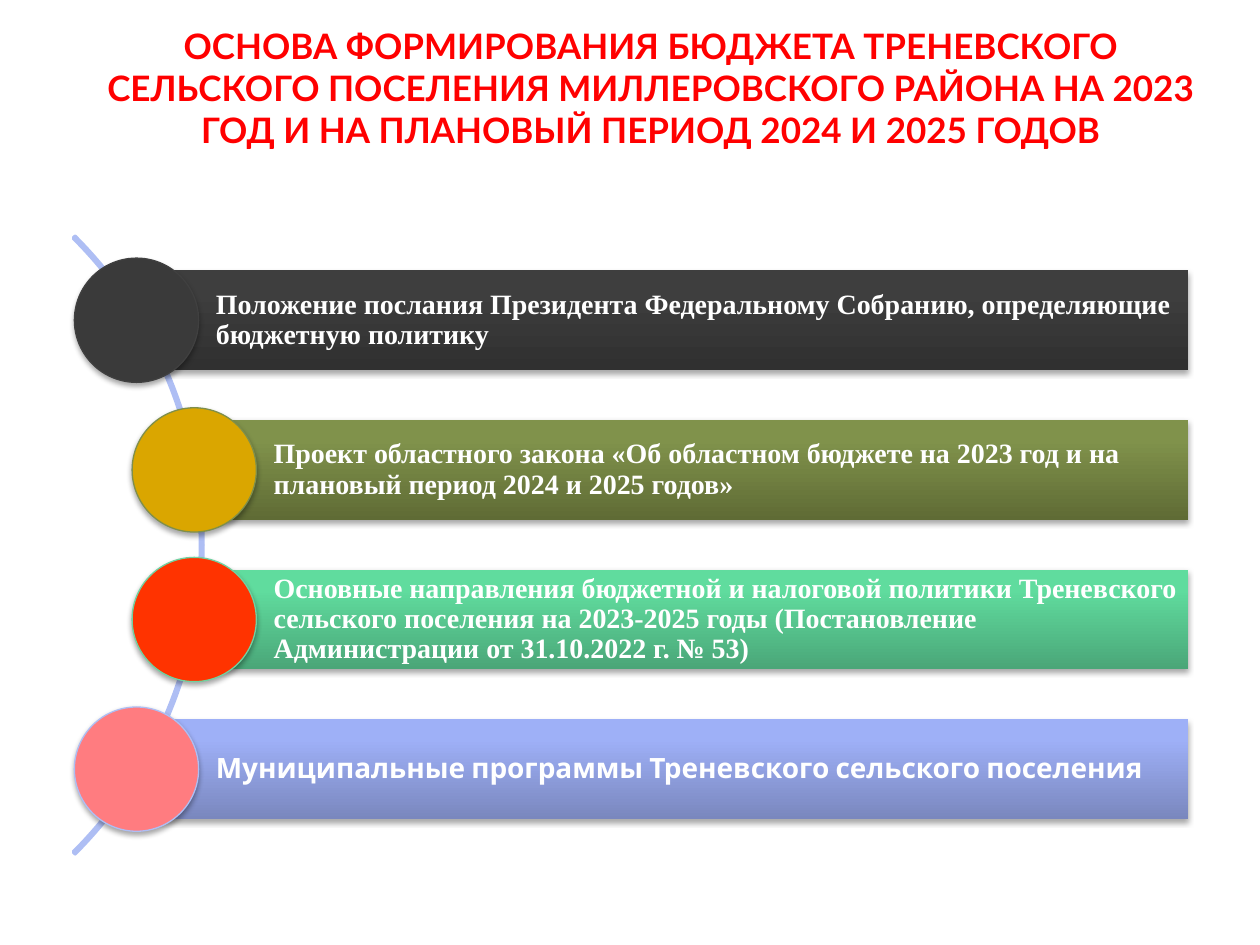
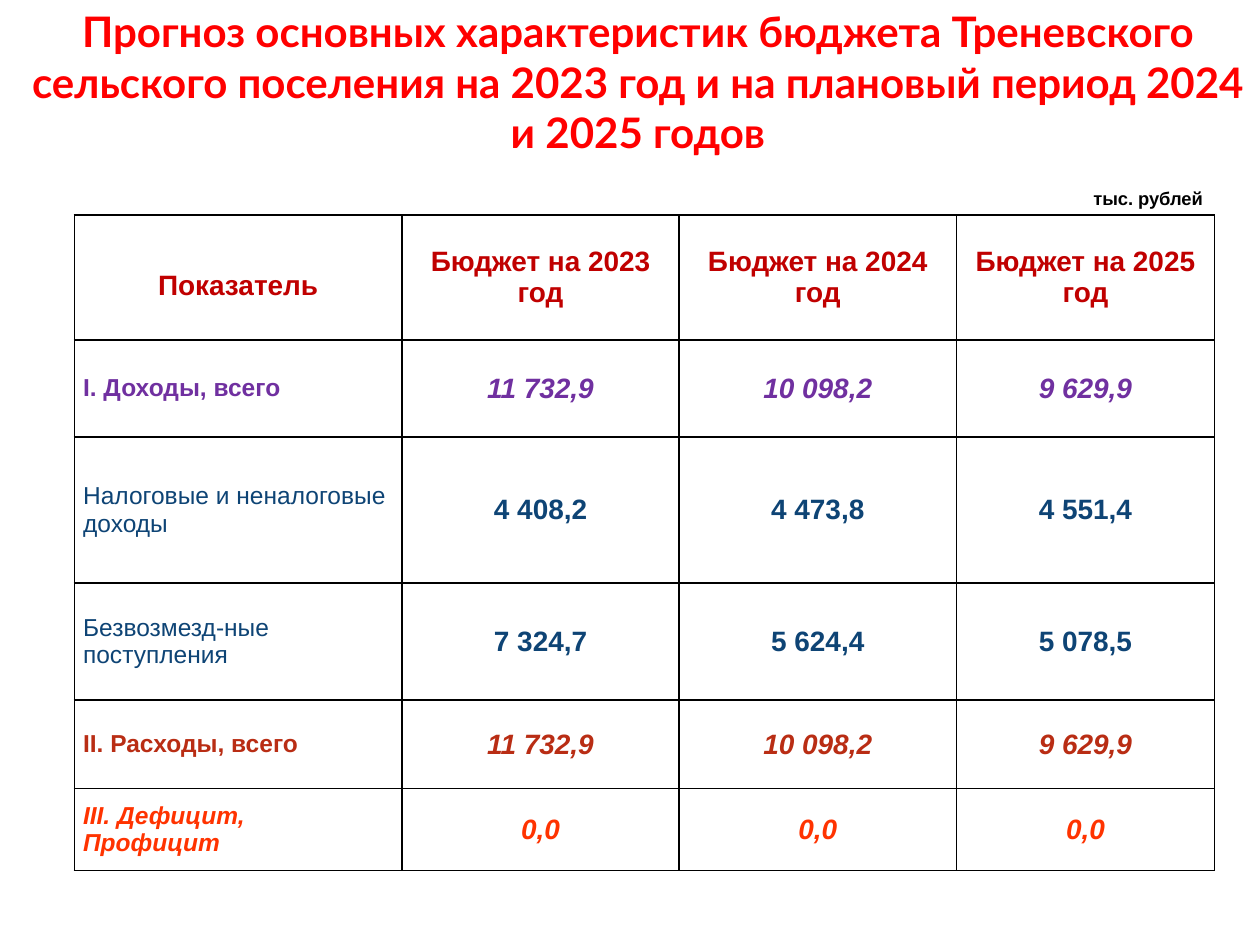
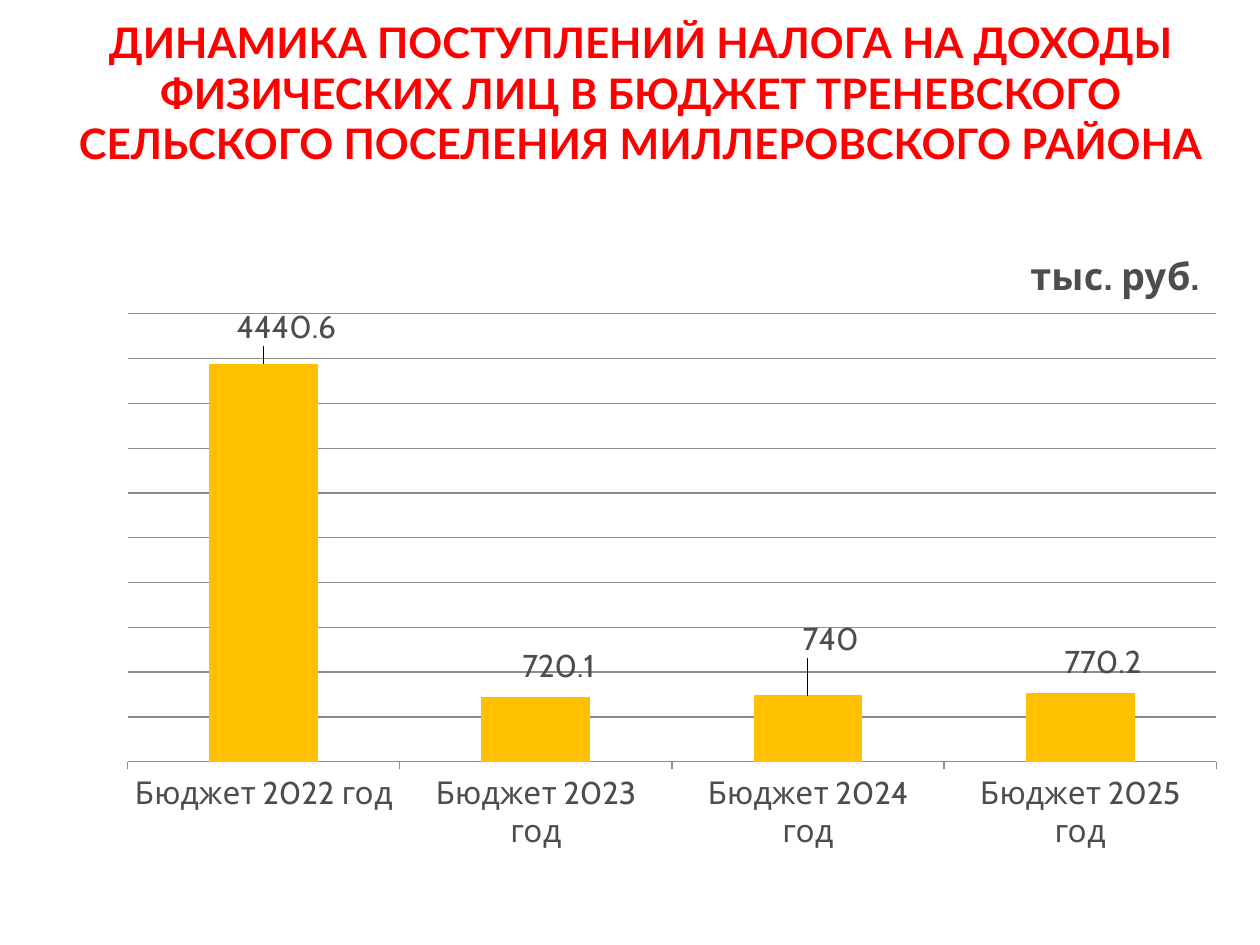
from lxml.etree import SubElement
from pptx import Presentation
from pptx.chart.data import CategoryChartData
from pptx.dml.color import RGBColor
from pptx.enum.chart import XL_CHART_TYPE, XL_LABEL_POSITION, XL_TICK_LABEL_POSITION, XL_TICK_MARK
from pptx.enum.shapes import MSO_SHAPE
from pptx.enum.text import MSO_ANCHOR, PP_ALIGN
from pptx.oxml import parse_xml
from pptx.oxml.ns import nsdecls, qn
from pptx.util import Pt

RED = RGBColor(0xFF, 0x00, 0x00)
WHITE = RGBColor(0xFF, 0xFF, 0xFF)
BLACK = RGBColor(0x00, 0x00, 0x00)
GRAY = RGBColor(0x4D, 0x4D, 0x4D)
GRID = RGBColor(0x8C, 0x8C, 0x8C)
AMBER = RGBColor(0xFF, 0xC0, 0x00)
ORANGE = RGBColor(0xFF, 0x33, 0x00)
CRIMSON = RGBColor(0xC0, 0x00, 0x00)
PURPLE = RGBColor(0x70, 0x30, 0xA0)
NAVY = RGBColor(0x0E, 0x44, 0x75)
BRICK = RGBColor(0xB9, 0x2D, 0x14)
PERIWINKLE = RGBColor(0xAE, 0xBE, 0xF4)
SHADOW = (f'<a:effectLst {nsdecls("a")}><a:outerShdw blurRad="40000" dist="23000" dir="5400000" '
          'rotWithShape="0"><a:srgbClr val="000000"><a:alpha val="35000"/></a:srgbClr>'
          '</a:outerShdw></a:effectLst>')
TITLE = dict(font="Lato", size=24, color=RED, bold=True, align=PP_ALIGN.CENTER)


def write(tf, text, font="Arial", size=16, color=BLACK, bold=False, italic=False,
          align=PP_ALIGN.LEFT, spacing=None):
    tf.word_wrap = True
    p = tf.paragraphs[0]
    p.alignment = align
    p.line_spacing = spacing
    for i, line in enumerate(text.split("\n")):
        if i:
            p.add_line_break()
        r = p.add_run()
        r.text = line
        r.font.name, r.font.size = font, Pt(size)
        r.font.bold, r.font.italic = bold, italic
        r.font.color.rgb = color


def add_text(s, x, y, w, h, text, anchor=MSO_ANCHOR.MIDDLE, **style):
    tf = s.shapes.add_textbox(Pt(x), Pt(y), Pt(w), Pt(h)).text_frame
    tf.vertical_anchor = anchor
    write(tf, text, **style)
    return tf


prs = Presentation()
prs.slide_width, prs.slide_height = Pt(720), Pt(540)
blank = prs.slide_layouts[6]

# Slide 1: basis of the budget
s = prs.slides.add_slide(blank)
tf = add_text(s, 48, 12, 648, 99,
              "ОСНОВА ФОРМИРОВАНИЯ БЮДЖЕТА ТРЕНЕВСКОГО СЕЛЬСКОГО ПОСЕЛЕНИЯ МИЛЛЕРОВСКОГО "
              "РАЙОНА НА 2023 ГОД И НА ПЛАНОВЫЙ ПЕРИОД 2024 И 2025 ГОДОВ",
              anchor=MSO_ANCHOR.TOP, **{**TITLE, "size": 20})
tf.margin_top = Pt(2)

# Arc behind the list
arc = s.shapes.add_shape(MSO_SHAPE.BLOCK_ARC, Pt(-383), Pt(62), Pt(499), Pt(499))
arc.adjustments[0], arc.adjustments[1], arc.adjustments[2] = 189, 27, 0.003
arc.shadow.inherit = False
arc.fill.background()
arc.line.color.rgb = PERIWINKLE
arc.line.width = Pt(2)

# Bars with circles: left edge, bar shades, circle fill and line, font, text
BAR_TOP, BAR_STEP, BAR_H, BAR_RIGHT, CIRCLE = 154.5, 85.5, 57, 679, 71
bars = [
    (78, "303030", "3E3E3E", "3A3A3A", "404040", "Times New Roman",
     "Положение послания Президента Федеральному Собранию, определяющие бюджетную политику"),
    (111, "5F6B35", "80924B", "DAA600", "7F8F4A", "Times New Roman",
     "Проект областного закона «Об областном бюджете на 2023 год и на плановый период "
     "2024 и 2025 годов»"),
    (111, "4AA678", "60DC9E", "FF3300", "71D1A0", "Times New Roman",
     "Основные направления бюджетной и налоговой политики Треневского сельского поселения "
     "на 2023-2025 годы (Постановление Администрации от 31.10.2022 г. № 53)"),
    (78, "7A87BE", "9EB0F7", "FF7C80", "AEBEF4", "Cabin",
     "Муниципальные программы Треневского сельского поселения"),
]
for i, (left, dark, light, disc, rim, font, text) in enumerate(bars):
    top = BAR_TOP + i * BAR_STEP
    bar = s.shapes.add_shape(MSO_SHAPE.RECTANGLE, Pt(left), Pt(top), Pt(BAR_RIGHT - left), Pt(BAR_H))
    bar.line.fill.background()
    bar.fill.gradient()
    bar.fill.gradient_angle = 90
    for stop, shade, position in zip(bar.fill.gradient_stops, (dark, light), (0, 0.8)):
        stop.color.rgb = RGBColor.from_string(shade)
        stop.position = position
    tf = bar.text_frame
    tf.vertical_anchor = MSO_ANCHOR.MIDDLE
    tf.margin_left = Pt(45.4)
    tf.margin_top = tf.margin_right = tf.margin_bottom = Pt(3)
    write(tf, text, font=font, color=WHITE, bold=True, spacing=0.9)

    circle = s.shapes.add_shape(MSO_SHAPE.OVAL, Pt(left - CIRCLE / 2), Pt(top + (BAR_H - CIRCLE) / 2),
                                Pt(CIRCLE), Pt(CIRCLE))
    circle.fill.solid()
    circle.fill.fore_color.rgb = RGBColor.from_string(disc)
    circle.line.color.rgb = RGBColor.from_string(rim)
    circle.line.width = Pt(0.75)
    for sp in (bar, circle):
        sp._element.spPr.append(parse_xml(SHADOW))

# Slide 2: main figures
s = prs.slides.add_slide(blank)
add_text(s, 9, 15, 711, 63,
         "Прогноз основных характеристик бюджета Треневского сельского поселения на 2023 год "
         "и на плановый период 2024 и 2025 годов", **TITLE)
add_text(s, 592.5, 103, 102, 20, "тыс. рублей", size=10.5, bold=True, align=PP_ALIGN.RIGHT)

# Table rows: height, label style, value style, cells
label = dict(size=14)
value = dict(bold=True, align=PP_ALIGN.CENTER)
total = dict(value, italic=True)
rows = [
    (71.3, dict(value, color=CRIMSON, spacing=1.5), dict(value, color=CRIMSON),
     ["Показатель", "Бюджет на 2023 год", "Бюджет на 2024 год", "Бюджет на 2025 год"]),
    (55.4, dict(label, color=PURPLE, bold=True), dict(total, color=PURPLE),
     ["I. Доходы, всего", "11 732,9", "10 098,2", "9 629,9"]),
    (83.5, dict(label, color=NAVY), dict(value, color=NAVY),
     ["Налоговые и неналоговые доходы", "4 408,2", "4 473,8", "4 551,4"]),
    (67, dict(label, color=NAVY), dict(value, color=NAVY),
     ["Безвозмезд-ные поступления", "7 324,7", "5 624,4", "5 078,5"]),
    (50.4, dict(label, color=BRICK, bold=True), dict(total, color=BRICK),
     ["II. Расходы, всего", "11 732,9", "10 098,2", "9 629,9"]),
    (46.8, dict(label, color=ORANGE, bold=True, italic=True), dict(total, color=ORANGE),
     ["III. Дефицит,\nПрофицит", "0,0", "0,0", "0,0"]),
]
widths = [187.2, 158.4, 158.4, 147.6]
table = s.shapes.add_table(len(rows), len(widths), Pt(42.5), Pt(123), Pt(sum(widths)),
                           Pt(sum(row[0] for row in rows))).table
table.first_row = table.horz_banding = False
for column, width in zip(table.columns, widths):
    column.width = Pt(width)
for row, (height, label_style, value_style, texts) in zip(table.rows, rows):
    row.height = Pt(height)
    for j, (cell, text) in enumerate(zip(row.cells, texts)):
        cell.vertical_anchor = MSO_ANCHOR.MIDDLE
        cell.margin_left = cell.margin_right = Pt(5)
        cell.margin_top = cell.margin_bottom = 0
        write(cell.text_frame, text, **(value_style if j else label_style))
        # Borders come before the fill in the cell properties
        tcPr = cell._tc.get_or_add_tcPr()
        for side in ("lnL", "lnR", "lnT", "lnB"):
            ln = SubElement(tcPr, qn(f"a:{side}"), w=str(Pt(1)))
            SubElement(SubElement(ln, qn("a:solidFill")), qn("a:srgbClr"), val=str(BLACK))
        cell.fill.background()

# Slide 3: income tax receipts
s = prs.slides.add_slide(blank)
add_text(s, 24, 6, 684, 94,
         "ДИНАМИКА ПОСТУПЛЕНИЙ НАЛОГА НА ДОХОДЫ\nФИЗИЧЕСКИХ ЛИЦ В БЮДЖЕТ ТРЕНЕВСКОГО "
         "СЕЛЬСКОГО ПОСЕЛЕНИЯ МИЛЛЕРОВСКОГО РАЙОНА", anchor=MSO_ANCHOR.TOP, **TITLE)

data = CategoryChartData()
data.categories = [f"Бюджет {year} год" for year in range(2022, 2026)]
data.add_series("тыс. руб.", [4440.6, 720.1, 740, 770.2])
chart = s.shapes.add_chart(XL_CHART_TYPE.COLUMN_CLUSTERED, Pt(60), Pt(120), Pt(648), Pt(371), data).chart
chart.has_legend = False
chart.font.name, chart.font.size = "Cabin", Pt(18)
chart.font.color.rgb = GRAY
chart.has_title = True
write(chart.chart_title.text_frame, "тыс. руб.", font="Cabin", size=21.6, color=GRAY, bold=True)

# Axes
axis = chart.value_axis
axis.minimum_scale, axis.maximum_scale, axis.major_unit = 0, 5000, 500
axis.major_gridlines.format.line.color.rgb = GRID
axis.visible = False
axis = chart.category_axis
axis.major_tick_mark = XL_TICK_MARK.OUTSIDE
axis.tick_label_position = XL_TICK_LABEL_POSITION.LOW
axis.format.line.color.rgb = GRID

# Columns and labels
plot = chart.plots[0]
plot.gap_width = 150
plot.vary_by_categories = False
series = plot.series[0]
series.format.fill.solid()
series.format.fill.fore_color.rgb = AMBER
for i in range(4):
    data_label = series.points[i].data_label
    data_label.position = XL_LABEL_POSITION.OUTSIDE_END
    data_label.font.name, data_label.font.size = "Cabin", Pt(18)
    data_label.font.color.rgb = GRAY

# Manual layout of the title, the plot area and the labels
shifts = [(0.02, -0.02), (0.02, -0.01), (0.02, -0.05), (0.02, -0.01)]
layouts = [(d.find(qn("c:idx")), dict(x=x, y=y))
           for d, (x, y) in zip(series._element.iter(qn("c:dLbl")), shifts)]
layouts.append((chart.chart_title._element.find(qn("c:tx")), dict(xMode="edge", yMode="edge", x=0.81, y=0.05)))
layouts.append((None, dict(layoutTarget="inner", xMode="edge", yMode="edge", x=0.02, y=0.16, w=0.96, h=0.69)))
plot_area = chart._chartSpace.chart.plotArea
for before, values in layouts:
    layout = parse_xml(f'<c:layout {nsdecls("c")}><c:manualLayout/></c:layout>')
    for name, setting in values.items():
        SubElement(layout[0], qn(f"c:{name}"), val=str(setting))
    parent = plot_area if before is None else before.getparent()
    for old in parent.findall(qn("c:layout")):
        parent.remove(old)
    if before is None:
        parent.insert(0, layout)
    else:
        before.addnext(layout)

prs.save("out.pptx")
